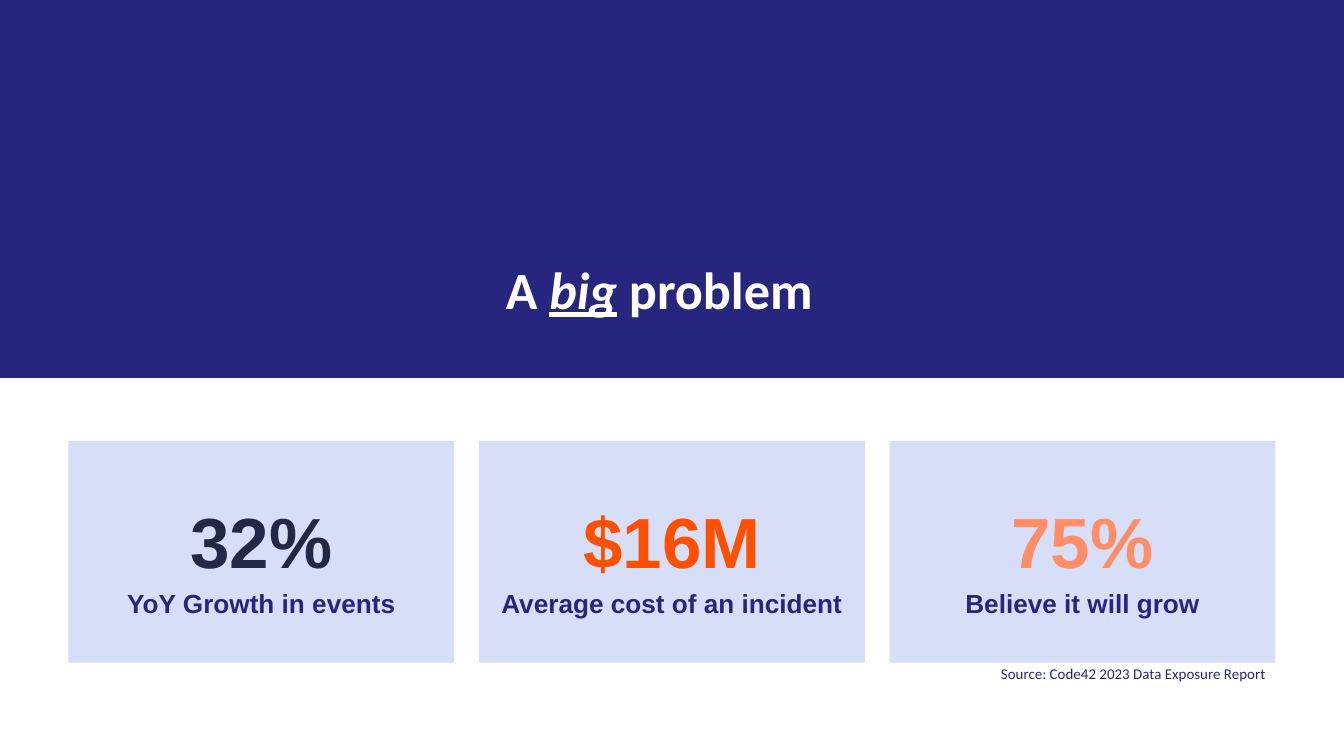
"""Build a slide with a title band and three headline figures."""
from dataclasses import dataclass

from pptx import Presentation
from pptx import util as u
from pptx.dml import color as c
from pptx.enum import shapes, text


@dataclass(frozen=True)
class Theme:
    """Colours, fonts and type sizes of the slide."""
    white: str = "FFFFFF"
    indigo: str = "27267F"
    card: str = "D6DEF8"
    navy: str = "202945"
    orange: str = "FF5000"
    peach: str = "FF8D66"
    heading_font: str = "Calibri"
    card_font: str = "Arial"
    title_size: int = 28
    figure_size: int = 38
    label_size: int = 14
    source_size: int = 8


THEME = Theme()


def add_run(p, content, *, font, size, color, bold=False, italic=False, underline=False):
    """Append a formatted run to a paragraph."""
    r = p.add_run()
    r.text = content
    r.font.name, r.font.size = font, u.Pt(size)
    r.font.bold, r.font.italic, r.font.underline = bold, italic, underline
    r.font.color.rgb = c.RGBColor.from_string(color)


def set_frame(tf, inset, anchor, fit=text.MSO_AUTO_SIZE.NONE):
    """Set wrapping, fitting, equal insets and vertical anchor of a text frame."""
    tf.word_wrap = True
    tf.auto_size = fit
    tf.vertical_anchor = anchor
    tf.margin_left = tf.margin_right = u.Inches(inset)
    tf.margin_top = tf.margin_bottom = u.Inches(inset)


def add_rect(s, left, top, width, height, color):
    """Add a flat filled rectangle without outline."""
    sp = s.shapes.add_shape(shapes.MSO_SHAPE.RECTANGLE, left, top, width, height)
    sp.shadow.inherit = False
    sp.fill.solid()
    sp.fill.fore_color.rgb = c.RGBColor.from_string(color)
    sp.line.fill.background()
    return sp


def add_title(s, band_width, band_height):
    """Place the title over its indigo band."""
    title = s.shapes.title
    band = add_rect(s, 0, 0, band_width, band_height, THEME.indigo)
    title.element.addprevious(band.element)
    title.left, title.top = u.Inches(0.52), u.Inches(1.72)
    title.width, title.height = u.Inches(8.77), u.Inches(0.93)
    set_frame(title.text_frame, 0, text.MSO_ANCHOR.MIDDLE)
    p = title.text_frame.paragraphs[0]
    p.alignment, p.line_spacing = text.PP_ALIGN.CENTER, 0.85
    for content, stressed in (("A ", False), ("big", True), (" problem", False)):
        add_run(p, content, font=THEME.heading_font, size=THEME.title_size,
                color=THEME.white, bold=True, italic=stressed, underline=stressed)


def add_card(s, left, width, figure, label, color):
    """Add a card with a large figure above its label."""
    sp = add_rect(s, left, u.Inches(3.28), width, u.Inches(1.65), THEME.card)
    tf = sp.text_frame
    set_frame(tf, 0.07, text.MSO_ANCHOR.MIDDLE)
    lines = ((tf.paragraphs[0], figure, THEME.figure_size, color),
             (tf.add_paragraph(), label, THEME.label_size, THEME.indigo))
    for p, content, size, line_color in lines:
        p.alignment, p.line_spacing = text.PP_ALIGN.CENTER, 1.15
        add_run(p, content, font=THEME.card_font, size=size, color=line_color, bold=True)


def add_cards(s, slide_width, cards):
    """Spread the cards evenly between equal side margins."""
    margin, width = u.Inches(0.51), u.Inches(2.87)
    step = (slide_width - 2 * margin - width) // (len(cards) - 1)
    for i, card in enumerate(cards):
        add_card(s, margin + i * step, width, *card)


def add_source(s, content):
    """Add the right-aligned source line."""
    sp = s.shapes.add_textbox(u.Inches(5.33), u.Inches(4.88), u.Inches(4.16), u.Inches(0.29))
    tf = sp.text_frame
    set_frame(tf, 0.07, text.MSO_ANCHOR.TOP, text.MSO_AUTO_SIZE.SHAPE_TO_FIT_TEXT)
    p = tf.paragraphs[0]
    p.alignment = text.PP_ALIGN.RIGHT
    add_run(p, content, font=THEME.heading_font, size=THEME.source_size, color=THEME.indigo)


def main():
    """Build and save the presentation."""
    prs = Presentation()
    prs.slide_width = u.Inches(10)
    prs.slide_height = prs.slide_width * 9 // 16
    s = prs.slides.add_slide(prs.slide_layouts[5])
    s.background.fill.solid()
    s.background.fill.fore_color.rgb = c.RGBColor.from_string(THEME.white)
    add_title(s, prs.slide_width, prs.slide_height // 2)
    add_cards(s, prs.slide_width, (
        ("32%", "YoY Growth in events", THEME.navy),
        ("$16M", "Average cost of an incident", THEME.orange),
        ("75%", "Believe it will grow", THEME.peach),
    ))
    add_source(s, "Source: Code42 2023 Data Exposure Report")
    prs.save("out.pptx")


if __name__ == "__main__":
    main()
